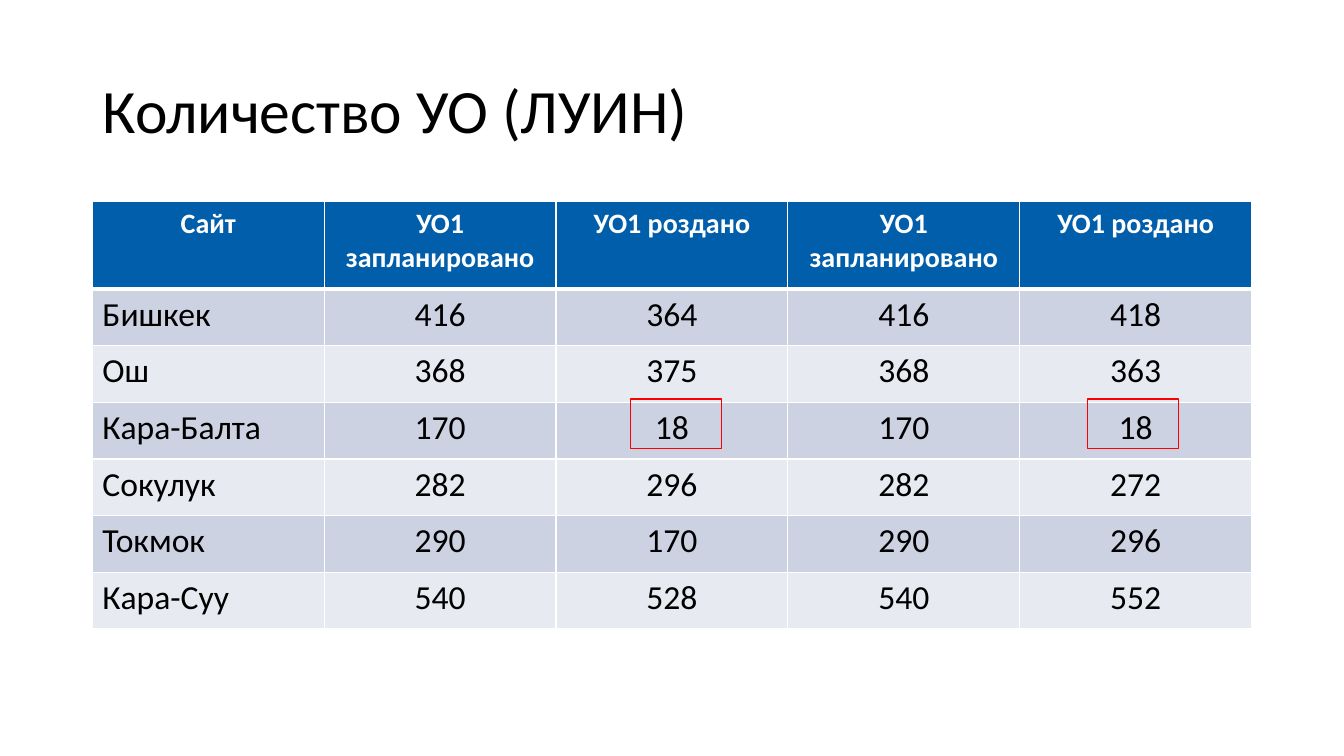
from lxml import etree
from pptx import Presentation
from pptx.dml.color import RGBColor as RGB
from pptx.enum.shapes import MSO_SHAPE as Shape
from pptx.enum.text import MSO_ANCHOR as Anchor, PP_ALIGN as Align
from pptx.oxml.ns import qn
from pptx.util import Emu, Pt

PX = 6350  # EMU in one px, 1920 x 1080 px slide
FONT = "Calibri"
INK = {"black": "000000", "white": "FFFFFF", "head": "005EAA",
       "odd": "CCD2E2", "even": "E7EAF1", "mark": "FF0000"}

HEAD = ["Сайт"] + ["УО1 запланировано", "УО1 роздано"] * 2
SITES = [
    ("Бишкек", 416, 364, 416, 418),
    ("Ош", 368, 375, 368, 363),
    ("Кара-Балта", 170, 18, 170, 18),
    ("Сокулук", 282, 296, 282, 272),
    ("Токмок", 290, 170, 290, 296),
    ("Кара-Суу", 540, 528, 540, 552),
]
LEFT, WIDE = 132, 1656
HEAD_H, ROW_H = 125, 81


def px(*nums):
    return [Emu(round(n * PX)) for n in nums]


def color(name):
    return RGB.from_string(INK[name])


def style(para, size, name, bold=False):
    for run in para.runs:
        font = run.font
        font.name, font.size, font.bold = FONT, Pt(size), bold
        font.color.rgb = color(name)


def add_title(slide, text):
    title = slide.shapes.title
    title.left, title.top, title.width, title.height = px(LEFT, 58, WIDE, 209)
    frame = title.text_frame
    frame.text = text
    frame.word_wrap = True
    frame.vertical_anchor = Anchor.MIDDLE
    para = frame.paragraphs[0]
    para.alignment = Align.LEFT
    para.line_spacing = 0.9
    style(para, 44, "black")


def set_edges(cell, widths):
    # Borders come before the fill in the cell properties
    props = cell._tc.get_or_add_tcPr()
    for spot, (side, points) in enumerate(widths.items()):
        line = etree.Element(qn(f"a:ln{side}"), w=str(Pt(points)))
        fill = etree.SubElement(line, qn("a:solidFill"))
        etree.SubElement(fill, qn("a:srgbClr"), val=INK["white"])
        props.insert(spot, line)


def fill_cell(cell, text, row, col):
    head = row == 0
    cell.text = str(text)
    para = cell.text_frame.paragraphs[0]
    para.alignment = Align.CENTER if head or col else Align.LEFT
    style(para, 20 if head else 24, "white" if head else "black", head)
    cell.fill.solid()
    cell.fill.fore_color.rgb = color("head" if head else "odd" if row % 2 else "even")
    set_edges(cell, {"L": 1, "R": 1, "T": 3 if row == 1 else 1, "B": 3 if head else 1})


def add_grid(slide, rows):
    count = len(rows[0])
    high = HEAD_H + ROW_H * (len(rows) - 1)
    grid = slide.shapes.add_table(len(rows), count, *px(LEFT, 288, WIDE, high)).table
    for col in grid.columns:
        col.width = px(WIDE / count)[0]
    for r, row in enumerate(rows):
        grid.rows[r].height = px(ROW_H if r else HEAD_H)[0]
        for c, text in enumerate(row):
            fill_cell(grid.cell(r, c), text, r, c)


def add_mark(slide, left):
    box = slide.shapes.add_shape(Shape.RECTANGLE, *px(left, 570, 130, 71))
    box.shadow.inherit = False
    box.fill.background()
    box.line.color.rgb = color("mark")
    box.line.width = Pt(1)


def main():
    deck = Presentation()
    deck.slide_width, deck.slide_height = px(1920, 1080)
    slide = deck.slides.add_slide(deck.slide_layouts[5])

    # Title and table
    add_title(slide, "Количество УО (ЛУИН)")
    add_grid(slide, [HEAD, *SITES])

    # Frames around the low values
    for left in (901, 1554):
        add_mark(slide, left)

    deck.save("out.pptx")


if __name__ == "__main__":
    main()
